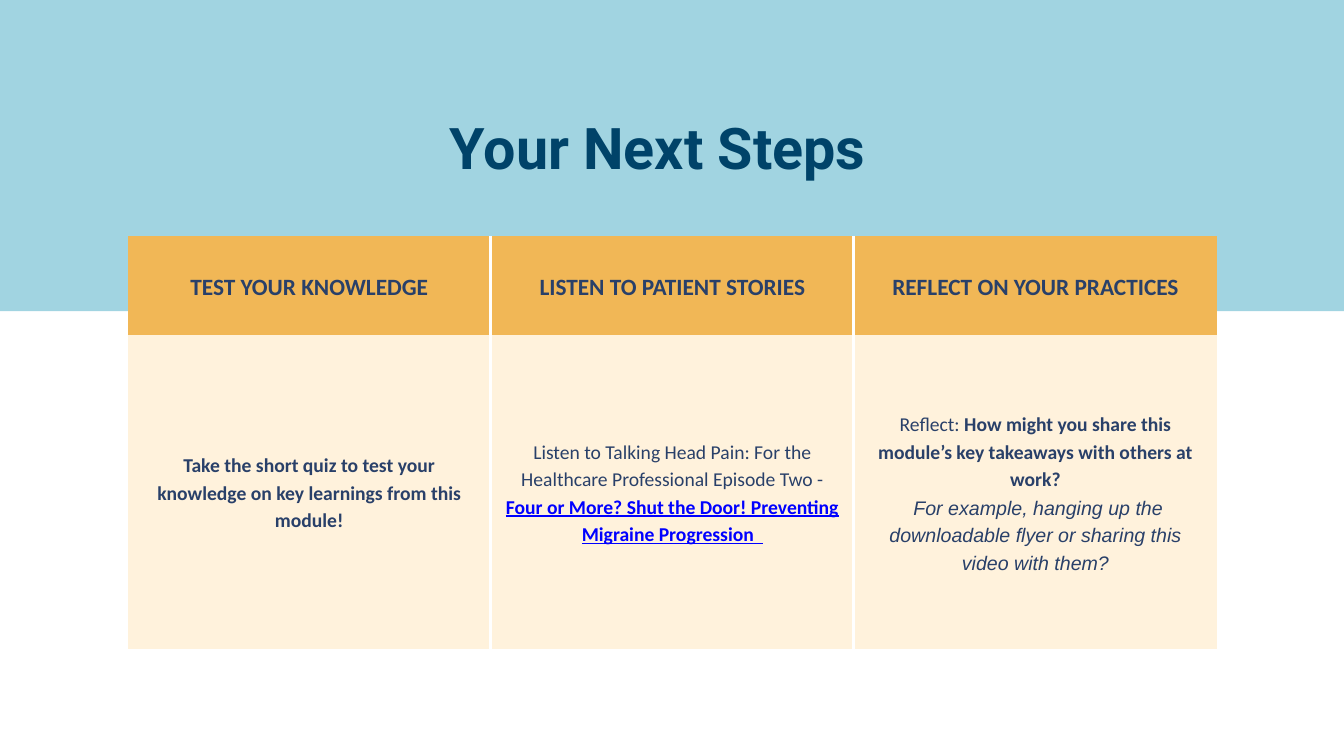
from lxml import etree
from pptx import Presentation
from pptx.dml.color import RGBColor
from pptx.enum.shapes import MSO_SHAPE
from pptx.enum.text import MSO_ANCHOR, MSO_AUTO_SIZE, PP_ALIGN
from pptx.oxml.ns import qn
from pptx.util import Inches, Pt

RECT = MSO_SHAPE.RECTANGLE
TOP, MID = MSO_ANCHOR.TOP, MSO_ANCHOR.MIDDLE
CENTER = PP_ALIGN.CENTER
FIXED = MSO_AUTO_SIZE.NONE

SKY = RGBColor(0xA1, 0xD4, 0xE1)
DEEP = RGBColor(0x00, 0x43, 0x69)
NAVY = RGBColor(0x29, 0x40, 0x69)
GOLD = RGBColor(0xF1, 0xB7, 0x56)
CREAM = RGBColor(0xFF, 0xF2, 0xDC)
BLUE = RGBColor(0x00, 0x00, 0xFF)
WHITE = RGBColor(0xFF, 0xFF, 0xFF)

COLS, ROWS = 20, 11.25
UNIT = Inches(1)
PAD = 0.21
RULE = 3.75

BOLD = {"bold": True}
LINK = {"bold": True, "underline": True, "color": BLUE}
SLANT = {"italic": True, "font": "Arial"}

HEADS = ["TEST YOUR KNOWLEDGE", "LISTEN TO PATIENT STORIES", "REFLECT ON YOUR PRACTICES"]
STEPS = [
    [[("Take the short quiz to test your knowledge on key learnings from this module!", BOLD)]],
    [[("Listen to Talking Head Pain: For the Healthcare Professional Episode Two - ", {}),
      ("Four or More? Shut the Door! Preventing Migraine Progression  ", LINK)]],
    [[("Reflect: ", {}),
      ("How might you share this module’s key takeaways with others at work?", BOLD)],
     [(" For example, hanging up the downloadable flyer or sharing this video with them?", SLANT)]],
]


class Deck:
    def __init__(self):
        self.file = Presentation()
        self.file.slide_width = self.span(COLS)
        self.file.slide_height = self.span(ROWS)
        self.slide = self.file.slides.add_slide(self.file.slide_layouts[5])

    def span(self, count):
        return int(count * UNIT)

    def box(self, *sides):
        return [self.span(side) for side in sides]

    def text(self, frame, paras, size, lead, font="Calibri", color=NAVY):
        for i, parts in enumerate(paras):
            para = frame.paragraphs[0] if i == 0 else frame.add_paragraph()
            para.alignment = CENTER
            para.line_spacing = Pt(lead)
            para.space_before = para.space_after = Pt(0)
            for words, look in parts:
                run = para.add_run()
                run.text = words
                run.font.size = Pt(size)
                run.font.name = look.get("font", font)
                run.font.color.rgb = look.get("color", color)
                run.font.bold = look.get("bold", False)
                run.font.italic = look.get("italic", False)
                run.font.underline = look.get("underline", False)

    def title(self, words, left, top, width, height):
        shape = self.slide.shapes.title
        shape.left, shape.top, shape.width, shape.height = self.box(left, top, width, height)
        frame = shape.text_frame
        frame.margin_left = frame.margin_top = frame.margin_right = frame.margin_bottom = 0
        frame.word_wrap = True
        frame.auto_size = FIXED
        frame.vertical_anchor = TOP
        self.text(frame, [[(words, BOLD)]], 61.5, 86.2, "Roboto", DEEP)

    def band(self, height):
        shape = self.slide.shapes.add_shape(RECT, *self.box(0, 0, COLS, height))
        shape.shadow.inherit = False
        shape.fill.solid()
        shape.fill.fore_color.rgb = SKY
        shape.line.fill.background()
        self.slide.shapes.title.element.addprevious(shape.element)

    def edge(self, cell, side, shown):
        line = etree.SubElement(cell._tc.get_or_add_tcPr(), qn("a:ln" + side))
        if shown:
            line.set("w", str(Pt(RULE)))
            fill = etree.SubElement(line, qn("a:solidFill"))
            etree.SubElement(fill, qn("a:srgbClr")).set("val", str(WHITE))
        else:
            line.set("w", "0")
            etree.SubElement(line, qn("a:noFill"))

    def cell(self, cell, paras, size, lead, tint, sides):
        for side in "LRTB":
            self.edge(cell, side, side in sides)
        cell.fill.solid()
        cell.fill.fore_color.rgb = tint
        cell.vertical_anchor = MID
        cell.margin_left = cell.margin_right = self.span(PAD)
        cell.margin_top = cell.margin_bottom = self.span(PAD)
        self.text(cell.text_frame, paras, size, lead)

    def table(self, heads, steps, left, top, width, tall):
        count = len(heads)
        place = self.box(left, top, width, sum(tall))
        grid = self.slide.shapes.add_table(2, count, *place).table
        grid.first_row = grid.horz_banding = False
        for row, height in zip(grid.rows, tall):
            row.height = self.span(height)
        for i, (head, step) in enumerate(zip(heads, steps)):
            grid.columns[i].width = self.span(width / count)
            sides = ("L" if i else "") + ("R" if i < count - 1 else "")
            self.cell(grid.cell(0, i), [[(head, BOLD)]], 25, 35, GOLD, sides)
            self.cell(grid.cell(1, i), step, 21, 29.4, CREAM, sides)

    def save(self):
        self.file.save("out.pptx")


def main():
    deck = Deck()
    deck.band(4.63)
    deck.title("Your Next Steps", 2.3, 1.5, 14.98, 1.15)
    deck.table(HEADS, STEPS, 1.9, 3.51, 16.21, [1.47, 4.68])
    deck.save()


if __name__ == "__main__":
    main()
